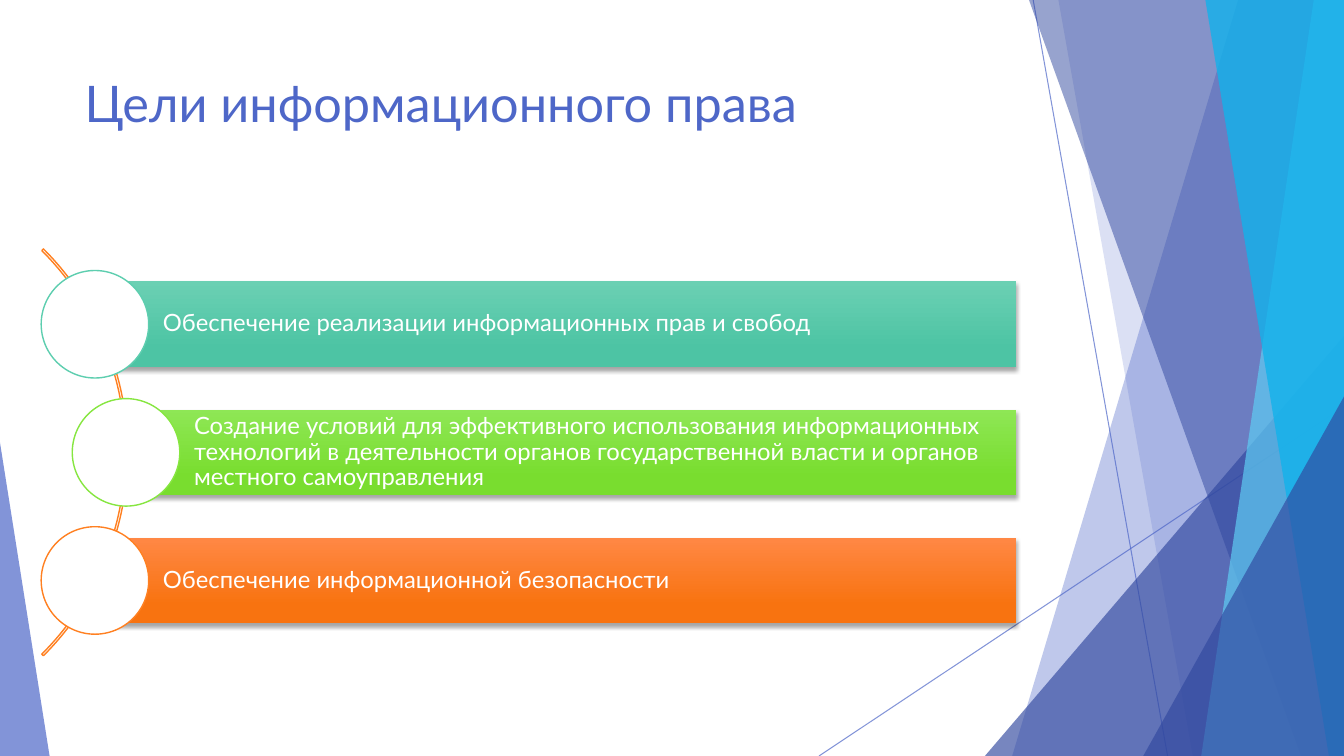
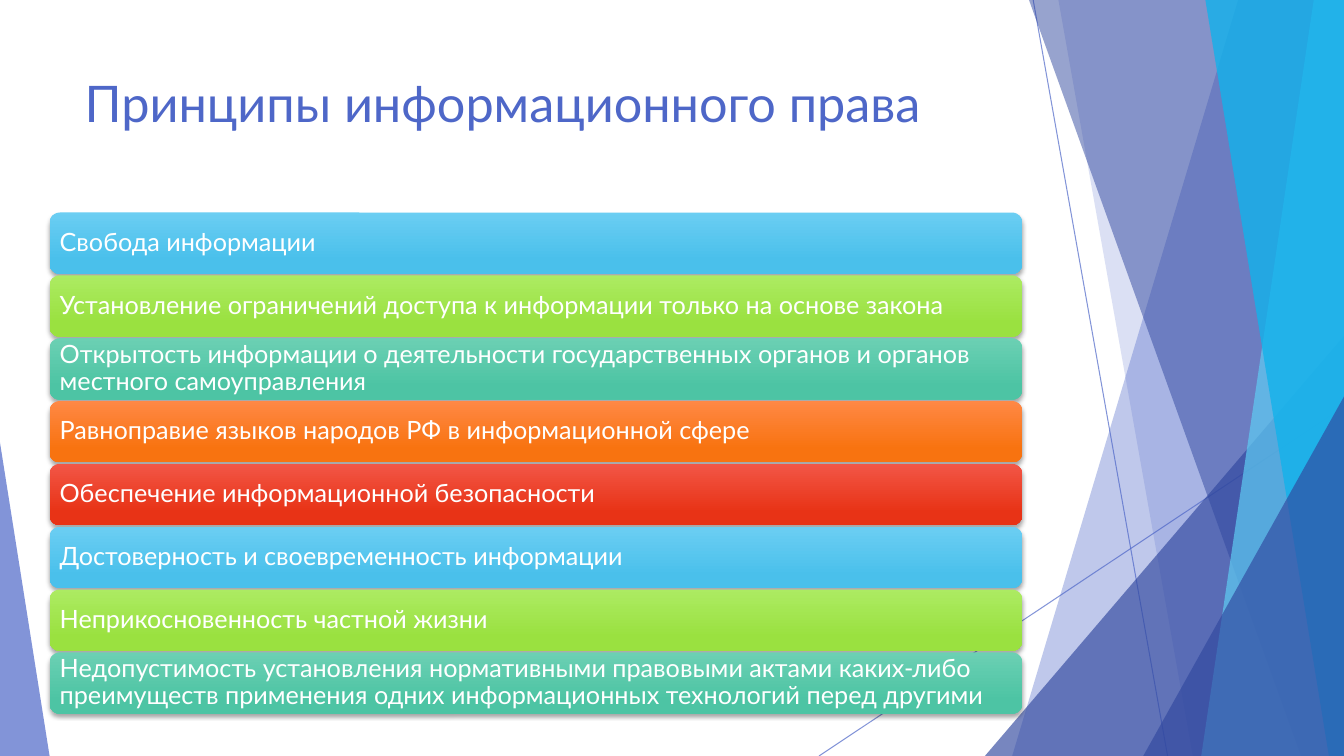
from dataclasses import dataclass
from itertools import cycle
from typing import NamedTuple

from lxml import etree
from pptx import Presentation
from pptx import util as u
from pptx.dml.color import RGBColor
from pptx.enum import shapes as kinds, text as txt
from pptx.oxml.ns import qn

COLUMNS, ROWS = 160, 90
WIDTH, HEIGHT = u.Inches(13.33), u.Inches(7.5)


def across(columns: float) -> u.Emu:
    return u.Emu(round(WIDTH * columns / COLUMNS))


def down(rows: float) -> u.Emu:
    return u.Emu(round(HEIGHT * rows / ROWS))


class Tone(NamedTuple):
    top: str
    bottom: str
    outline: str = ""


@dataclass(frozen=True)
class Theme:
    font: str = "Lato"
    title_size: int = 36
    goal_size: int = 17
    principle_size: int = 18
    accent: str = "4E67C8"
    deep: str = "31489F"
    aqua: str = "5ECCF3"
    cyan: str = "12B2EB"
    white: str = "FFFFFF"
    black: str = "000000"
    teal: Tone = Tone("6BD0B3", "4DC4A4", "5DCEAF")
    green: Tone = Tone("8EE755", "79DD2F", "86E640")
    orange: Tone = Tone("FF8845", "F87310", "FF8021")
    sky: Tone = Tone("6BCEF3", "4AC0EB")
    lime: Tone = Tone("ACEB62", "9AE140")
    red: Tone = Tone("F25646", "E83316")


THEME = Theme()


class Area(NamedTuple):
    left: float
    top: float
    width: float
    height: float

    def emu(self) -> tuple:
        return across(self.left), down(self.top), across(self.width), down(self.height)


class Ray(NamedTuple):
    start: tuple
    end: tuple


class Facet(NamedTuple):
    top_left: float
    bottom_left: float
    color: str
    opacity: int


class Wedge(NamedTuple):
    area: Area
    apex: float
    color: str
    opacity: int


class Goal(NamedTuple):
    wording: str
    tone: Tone
    left: float


RAYS = [Ray((123, 0), (139, 90)), Ray((160, 48.4), (97.5, 90))]
BACKDROP = [
    Facet(147.4, 120.5, THEME.accent, 36),
    Facet(126, 142, THEME.accent, 20),
    Wedge(Area(117.25, 40, 42.75, 50), 1, THEME.deep, 66),
    Facet(122.5, 154.9, THEME.deep, 50),
    Facet(156.4, 143, THEME.aqua, 70),
    Facet(143.5, 158.2, THEME.cyan, 80),
    Wedge(Area(136.1, 47.2, 23.9, 42.8), 1, THEME.deep, 66),
    Wedge(Area(0, 52.7, 5.9, 37.3), 0, THEME.accent, 70),
]
TITLE = Area(8.9, 8, 112.8, 17.3)

GOALS = [
    Goal("Обеспечение реализации информационных прав и свобод", THEME.teal, 11.3),
    Goal("Создание условий для эффективного использования информационных технологий "
         "в деятельности органов государственной власти и органов местного самоуправления",
         THEME.green, 15),
    Goal("Обеспечение информационной безопасности", THEME.orange, 11.3),
]
GOAL_RIGHT, GOAL_TOP, GOAL_HEIGHT, GOAL_STEP = 121, 33.5, 10.2, 15.25
MARKER = 12.8
ARC = Area(-53.3, 19.6, 68.5, 68.5)

PRINCIPLES = [
    "Свобода информации",
    "Установление ограничений доступа к информации только на основе закона",
    "Открытость информации о деятельности государственных органов и органов "
    "местного самоуправления",
    "Равноправие языков народов РФ в информационной сфере",
    "Обеспечение информационной безопасности",
    "Достоверность и своевременность информации",
    "Неприкосновенность частной жизни",
    "Недопустимость установления нормативными правовыми актами каких-либо преимуществ "
    "применения одних информационных технологий перед другими",
]
PRINCIPLE_TONES = [THEME.sky, THEME.lime, THEME.teal, THEME.orange, THEME.red]
FIRST_PRINCIPLE = Area(5.9, 25.3, 115.8, 7.3)
PRINCIPLE_STEP = 7.48


def rgb(color: str) -> RGBColor:
    return RGBColor.from_string(color)


def set_opacity(element, percent: int) -> None:
    color = next(element.iter(qn("a:srgbClr")))
    etree.SubElement(color, qn("a:alpha"), val=str(percent * 1000))


def paint_flat(shape, color: str, opacity: int) -> None:
    shape.shadow.inherit = False
    shape.fill.solid()
    shape.fill.fore_color.rgb = rgb(color)
    shape.line.fill.background()
    set_opacity(shape.element, opacity)


def paint_bar(shape, tone: Tone) -> None:
    shape.line.fill.background()
    shape.fill.gradient()
    shape.fill.gradient_angle = 270
    for stop, color, position in zip(shape.fill.gradient_stops, tone[:2], (0, 0.78)):
        stop.color.rgb = rgb(color)
        stop.position = position
    shape.shadow.inherit = False
    effects = shape.element.spPr.find(qn("a:effectLst"))
    shadow = etree.SubElement(effects, qn("a:outerShdw"), blurRad=str(u.Pt(3)),
                              dist=str(u.Pt(2)), dir="5400000", rotWithShape="0")
    etree.SubElement(shadow, qn("a:srgbClr"), val=THEME.black)
    set_opacity(shadow, 35)


def write(frame, wording: str, size: int, color: str):
    frame.word_wrap = True
    paragraph = frame.paragraphs[0]
    paragraph.alignment = txt.PP_ALIGN.LEFT
    run = paragraph.add_run()
    run.text = wording
    run.font.name = THEME.font
    run.font.size = u.Pt(size)
    run.font.color.rgb = rgb(color)
    return paragraph


def draw_bar(slide, kind, area: Area, tone: Tone, wording: str, size: int,
             indent: float, inset: float) -> None:
    bar = slide.shapes.add_shape(kind, *area.emu())
    paint_bar(bar, tone)
    frame = bar.text_frame
    frame.vertical_anchor = txt.MSO_ANCHOR.MIDDLE
    frame.margin_left = across(indent)
    frame.margin_right = across(inset)
    frame.margin_top = frame.margin_bottom = down(inset)
    write(frame, wording, size, THEME.white).line_spacing = 0.9


def draw_ray(slide, ray: Ray):
    line = slide.shapes.add_connector(
        kinds.MSO_CONNECTOR.STRAIGHT, across(ray.start[0]), down(ray.start[1]),
        across(ray.end[0]), down(ray.end[1]))
    line.line.color.rgb = rgb(THEME.accent)
    line.line.width = u.Pt(0.75)
    set_opacity(line.element, 70)
    etree.SubElement(line.element.spPr, qn("a:effectLst"))
    return line


def draw_facet(slide, facet: Facet):
    outline = slide.shapes.build_freeform(across(facet.top_left), 0)
    outline.add_line_segments(
        [(WIDTH, 0), (WIDTH, HEIGHT), (across(facet.bottom_left), HEIGHT)], close=True)
    shape = outline.convert_to_shape()
    paint_flat(shape, facet.color, facet.opacity)
    return shape


def draw_wedge(slide, wedge: Wedge):
    shape = slide.shapes.add_shape(kinds.MSO_SHAPE.ISOSCELES_TRIANGLE, *wedge.area.emu())
    shape.adjustments[0] = wedge.apex
    paint_flat(shape, wedge.color, wedge.opacity)
    return shape


def decorate_layout(layout, slide) -> None:
    parts = [draw_ray(slide, ray) for ray in RAYS]
    for piece in BACKDROP:
        draw = draw_facet if isinstance(piece, Facet) else draw_wedge
        parts.append(draw(slide, piece))
    for part in parts:
        layout.shapes.element.append(part.element)


def draw_title(slide, wording: str) -> None:
    title = slide.shapes.add_textbox(*TITLE.emu())
    write(title.text_frame, wording, THEME.title_size, THEME.accent)


def outline_shape(shape, color: str) -> None:
    shape.shadow.inherit = False
    shape.line.color.rgb = rgb(color)
    shape.line.width = u.Pt(1)


def draw_goals(slide) -> None:
    draw_title(slide, "Цели информационного права")
    arc = slide.shapes.add_shape(kinds.MSO_SHAPE.BLOCK_ARC, *ARC.emu())
    for index, value in enumerate((189, 27, 0.004)):
        arc.adjustments[index] = value
    arc.fill.background()
    outline_shape(arc, THEME.orange.outline)
    for index, goal in enumerate(GOALS):
        top = GOAL_TOP + index * GOAL_STEP
        area = Area(goal.left, top, GOAL_RIGHT - goal.left, GOAL_HEIGHT)
        draw_bar(slide, kinds.MSO_SHAPE.RECTANGLE, area, goal.tone, goal.wording,
                 THEME.goal_size, 8.1, 0.6)
        circle = Area(goal.left - MARKER / 2, top + (GOAL_HEIGHT - MARKER) / 2, MARKER, MARKER)
        marker = slide.shapes.add_shape(kinds.MSO_SHAPE.OVAL, *circle.emu())
        marker.fill.solid()
        marker.fill.fore_color.rgb = rgb(THEME.white)
        outline_shape(marker, goal.tone.outline)


def draw_principles(slide) -> None:
    draw_title(slide, "Принципы информационного права")
    for index, (wording, tone) in enumerate(zip(PRINCIPLES, cycle(PRINCIPLE_TONES))):
        area = FIRST_PRINCIPLE._replace(top=FIRST_PRINCIPLE.top + index * PRINCIPLE_STEP)
        draw_bar(slide, kinds.MSO_SHAPE.ROUNDED_RECTANGLE, area, tone, wording,
                 THEME.principle_size, 0.85, 0.85)


def main() -> None:
    deck = Presentation()
    deck.slide_width, deck.slide_height = WIDTH, HEIGHT
    blank = deck.slide_layouts[6]
    goals, principles = (deck.slides.add_slide(blank) for _ in range(2))
    decorate_layout(blank, goals)
    draw_goals(goals)
    draw_principles(principles)
    deck.save("out.pptx")


if __name__ == "__main__":
    main()
